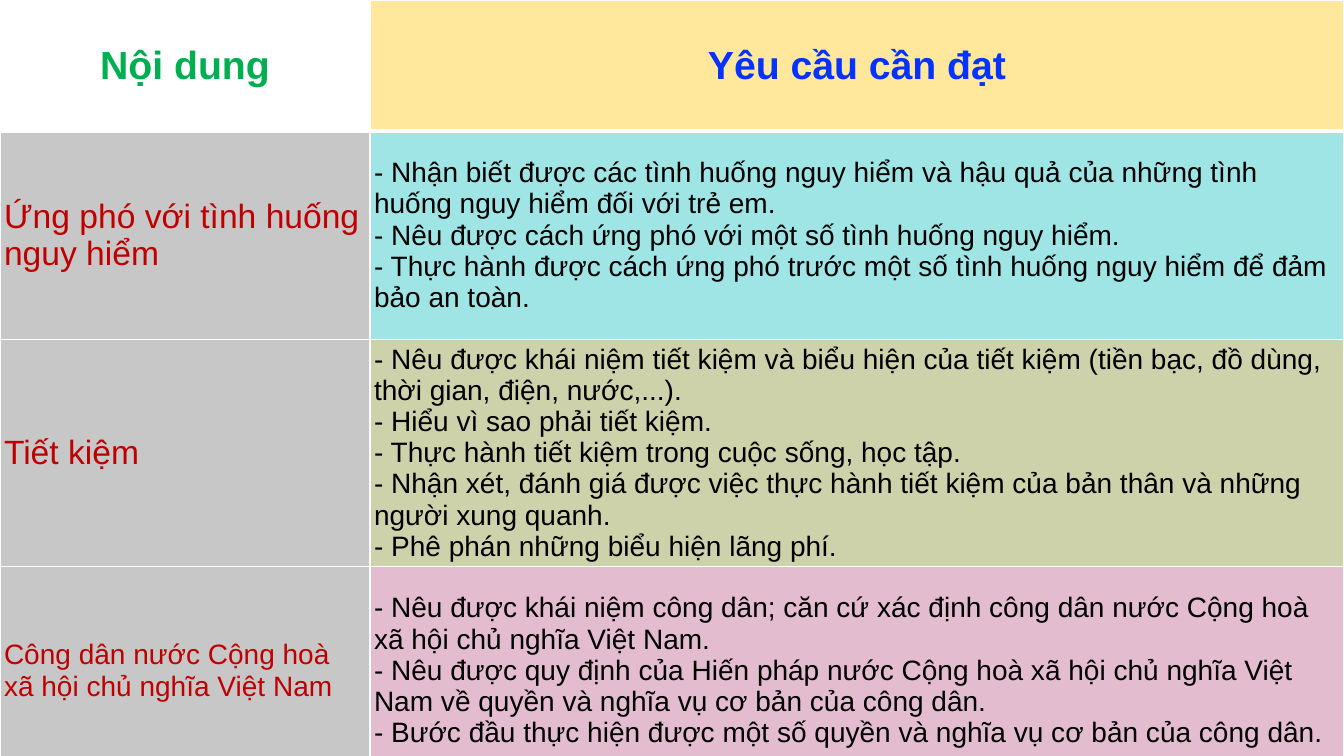
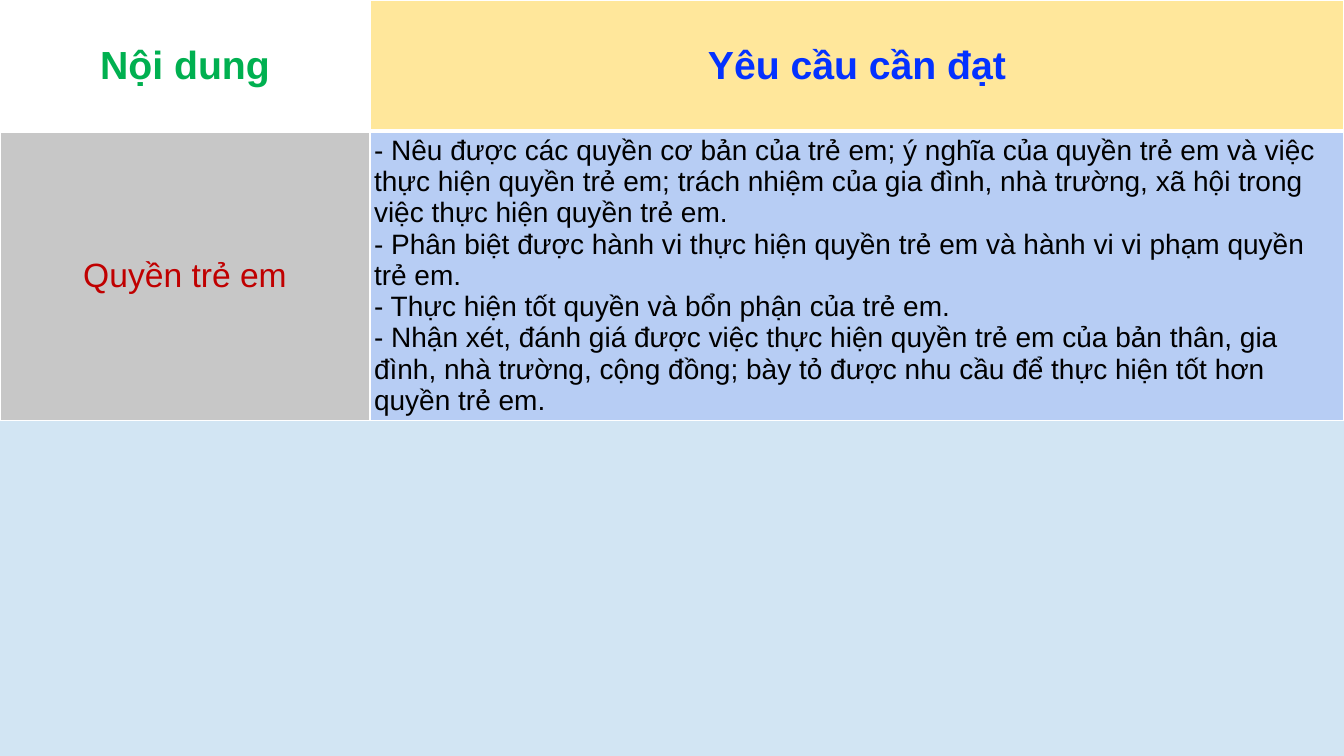
from lxml.etree import SubElement
from pptx import Presentation
from pptx.dml.color import RGBColor
from pptx.enum.text import MSO_ANCHOR, PP_ALIGN
from pptx.oxml.ns import qn
from pptx.util import Inches, Pt

WIDE, HIGH = 13.33, 7.5
LEFT = 3.67
HEAD, BODY = 1.3, 2.07
INSET = 0.04
FONT = "Arial"
WHITE, BLACK, GREEN, BLUE = "FFFFFF", "000000", "00B050", "0432FF"
RED, GRAY, SAND = "C00000", "C7C7C7", "FFE79B"


def rgb(code):
    return RGBColor.from_string(code)


class Deck:
    def __init__(self):
        self.prs = Presentation()
        self.prs.slide_width = Inches(WIDE)
        self.prs.slide_height = Inches(HIGH)
        self.slide = None

    def page(self, back):
        self.slide = self.prs.slides.add_slide(self.prs.slide_layouts[6])
        fill = self.slide.background.fill
        fill.solid()
        fill.fore_color.rgb = rgb(back)

    def edges(self, cell, top, low):
        """Draw white cell borders; top and low are widths in points."""
        props = cell._tc.get_or_add_tcPr()
        for side, width in (("L", 1), ("R", 1), ("T", top), ("B", low)):
            line = SubElement(props, qn("a:ln" + side), w=str(Pt(width)))
            paint = SubElement(line, qn("a:solidFill"))
            SubElement(paint, qn("a:srgbClr"), val=WHITE)

    def paint(self, cell, color, alpha):
        """Fill a cell; alpha is its opacity in percent."""
        cell.fill.solid()
        cell.fill.fore_color.rgb = rgb(color)
        if alpha < 100:
            tone = cell._tc.tcPr.find(".//" + qn("a:solidFill") + "/" + qn("a:srgbClr"))
            # The border colours come first, so pick the cell's own fill.
            tone = cell._tc.tcPr.find(qn("a:solidFill")).find(qn("a:srgbClr"))
            SubElement(tone, qn("a:alpha"), val=str(alpha * 1000))

    def cell(self, cell, lines, size, color, fill, alpha=100, bold=False,
             align=PP_ALIGN.LEFT, top=1, low=1):
        self.edges(cell, top, low)
        self.paint(cell, fill, alpha)
        cell.vertical_anchor = MSO_ANCHOR.MIDDLE
        cell.margin_left = cell.margin_right = Inches(INSET)
        cell.margin_top = cell.margin_bottom = Inches(INSET)
        frame = cell.text_frame
        for i, line in enumerate(lines):
            para = frame.add_paragraph() if i else frame.paragraphs[0]
            para.alignment = align
            run = para.add_run()
            run.text = line
            run.font.name, run.font.size = FONT, Pt(size)
            run.font.bold = bold
            run.font.color.rgb = rgb(color)

    def table(self, topics, align=PP_ALIGN.LEFT):
        """Add the goals table; a topic is (label, size, fill, alpha, goals)."""
        count = len(topics)
        grid = self.slide.shapes.add_table(
            count + 1, 2, 0, 0, Inches(WIDE), Inches(HEAD + BODY * count)).table
        grid.columns[0].width = Inches(LEFT)
        grid.columns[1].width = Inches(WIDE - LEFT)
        grid.rows[0].height = Inches(HEAD)
        heads = (("Nội dung", GREEN, WHITE), ("Yêu cầu cần đạt", BLUE, SAND))
        for col, (text, color, fill) in enumerate(heads):
            self.cell(grid.cell(0, col), [text], 28, color, fill,
                      bold=True, align=PP_ALIGN.CENTER, low=3)
        for row, (label, size, fill, alpha, goals) in enumerate(topics, 1):
            grid.rows[row].height = Inches(BODY)
            top = 3 if row == 1 else 1
            self.cell(grid.cell(row, 0), [label], size, RED, GRAY,
                      align=align, top=top)
            self.cell(grid.cell(row, 1), goals, 20, BLACK, fill, alpha, top=top)


def main():
    deck = Deck()
    deck.page("DDDDDD")
    deck.table([
        ("Ứng phó với tình huống nguy hiểm", 24, "00FDFF", 28, [
            "- Nhận biết được các tình huống nguy hiểm và hậu quả của những tình huống nguy hiểm đối với trẻ em.",
            "- Nêu được cách ứng phó với một số tình huống nguy hiểm.",
            "- Thực hành được cách ứng phó trước một số tình huống nguy hiểm để đảm bảo an toàn.",
        ]),
        ("Tiết kiệm", 24, "A6B727", 28, [
            "- Nêu được khái niệm tiết kiệm và biểu hiện của tiết kiệm (tiền bạc, đồ dùng, thời gian, điện, nước,...).",
            "- Hiểu vì sao phải tiết kiệm.",
            "- Thực hành tiết kiệm trong cuộc sống, học tập.",
            "- Nhận xét, đánh giá được việc thực hành tiết kiệm của bản thân và những người xung quanh.",
            "- Phê phán những biểu hiện lãng phí.",
        ]),
        ("Công dân nước Cộng hoà xã hội chủ nghĩa Việt Nam", 20, "FF2F92", 18, [
            "- Nêu được khái niệm công dân; căn cứ xác định công dân nước Cộng hoà xã hội chủ nghĩa Việt Nam.",
            "- Nêu được quy định của Hiến pháp nước Cộng hoà xã hội chủ nghĩa Việt Nam về quyền và nghĩa vụ cơ bản của công dân.",
            "- Bước đầu thực hiện được một số quyền và nghĩa vụ cơ bản của công dân.",
        ]),
    ])
    deck.page("D2E5F3")
    deck.table([
        ("Quyền trẻ em", 24, BLUE, 13, [
            "- Nêu được các quyền cơ bản của trẻ em; ý nghĩa của quyền trẻ em và việc thực hiện quyền trẻ em; trách nhiệm của gia đình, nhà trường, xã hội trong việc thực hiện quyền trẻ em.",
            "- Phân biệt được hành vi thực hiện quyền trẻ em và hành vi vi phạm quyền trẻ em.",
            "- Thực hiện tốt quyền và bổn phận của trẻ em.",
            "- Nhận xét, đánh giá được việc thực hiện quyền trẻ em của bản thân, gia đình, nhà trường, cộng đồng; bày tỏ được nhu cầu để thực hiện tốt hơn quyền trẻ em.",
        ]),
    ], align=PP_ALIGN.CENTER)
    deck.prs.save("out.pptx")


if __name__ == "__main__":
    main()
